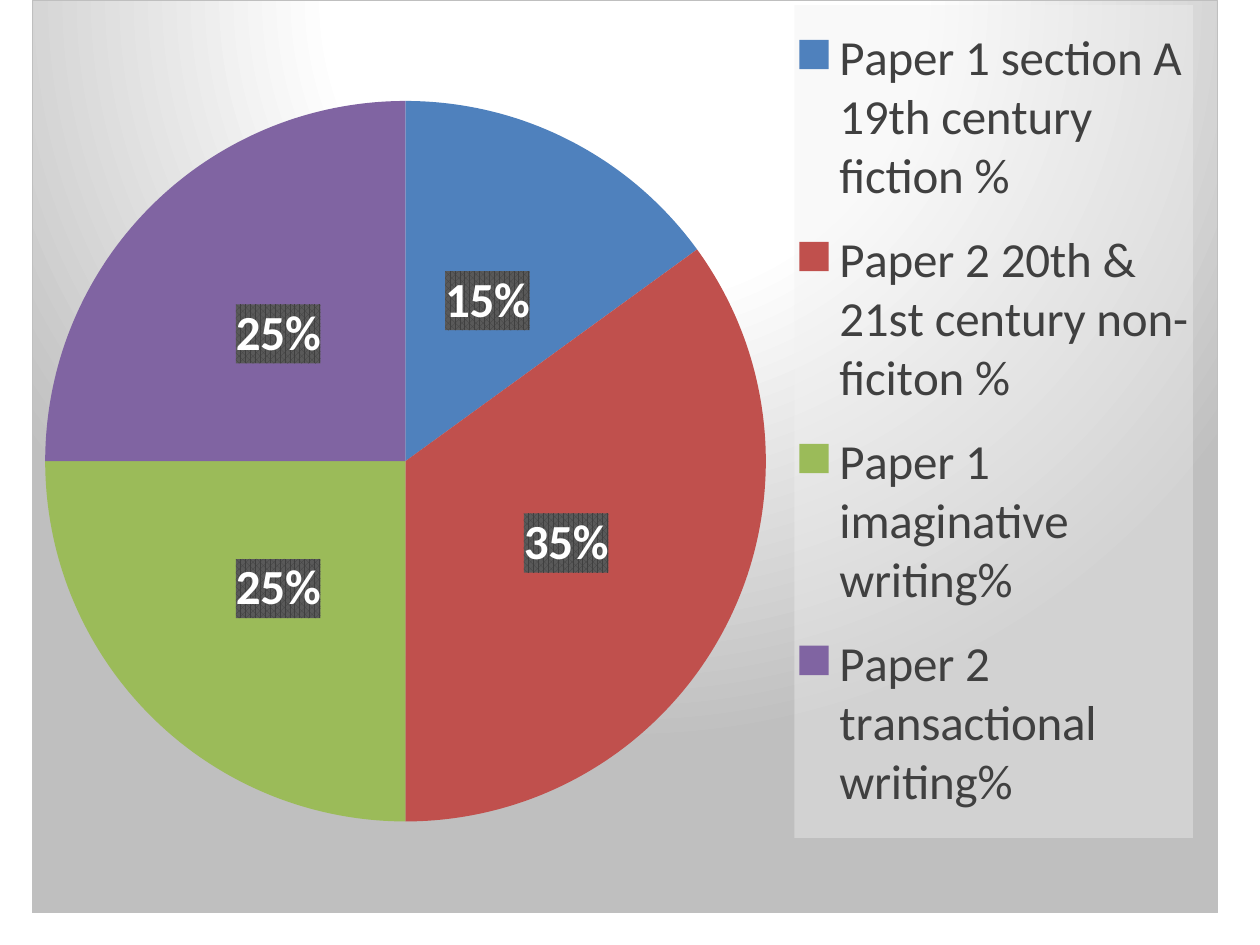
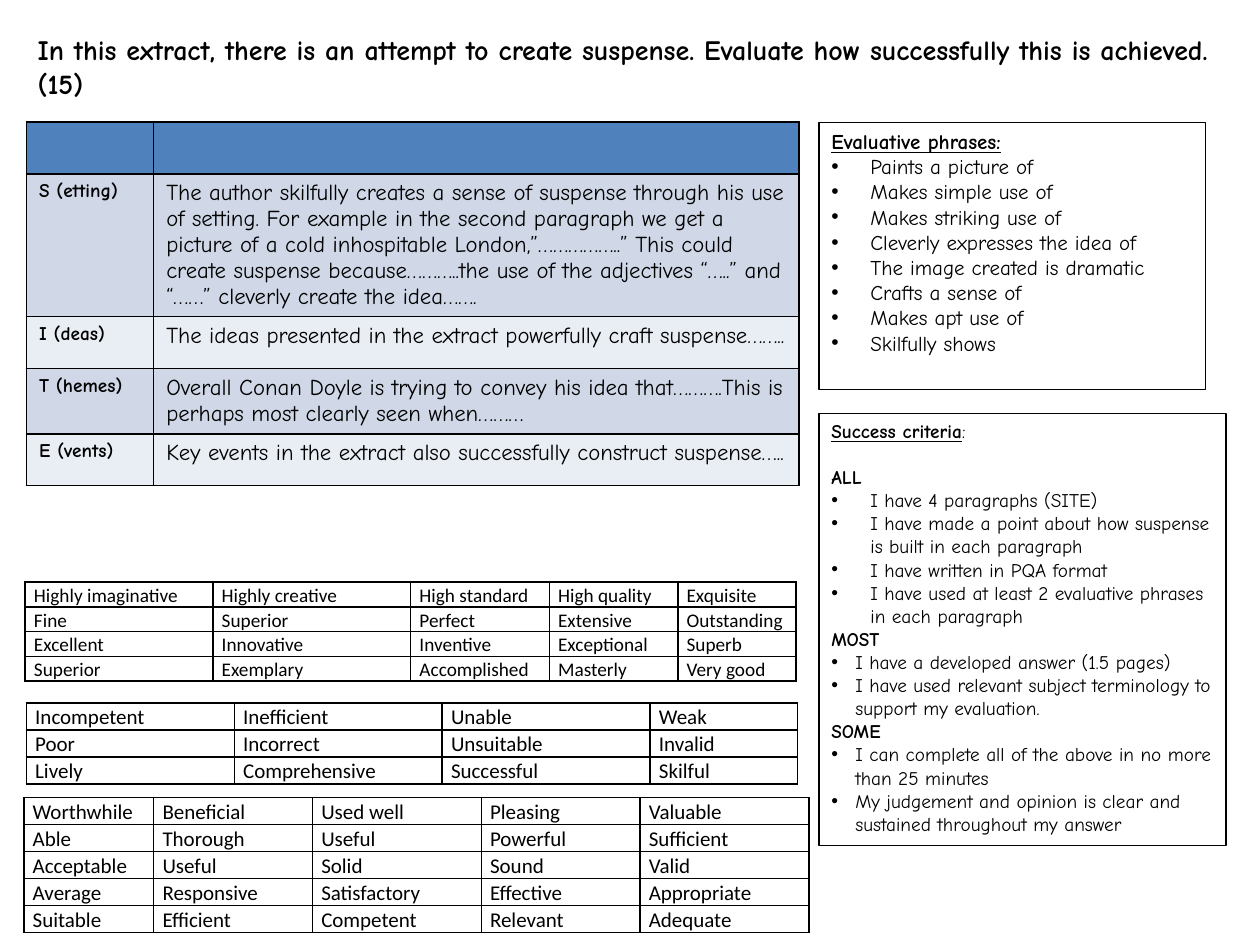
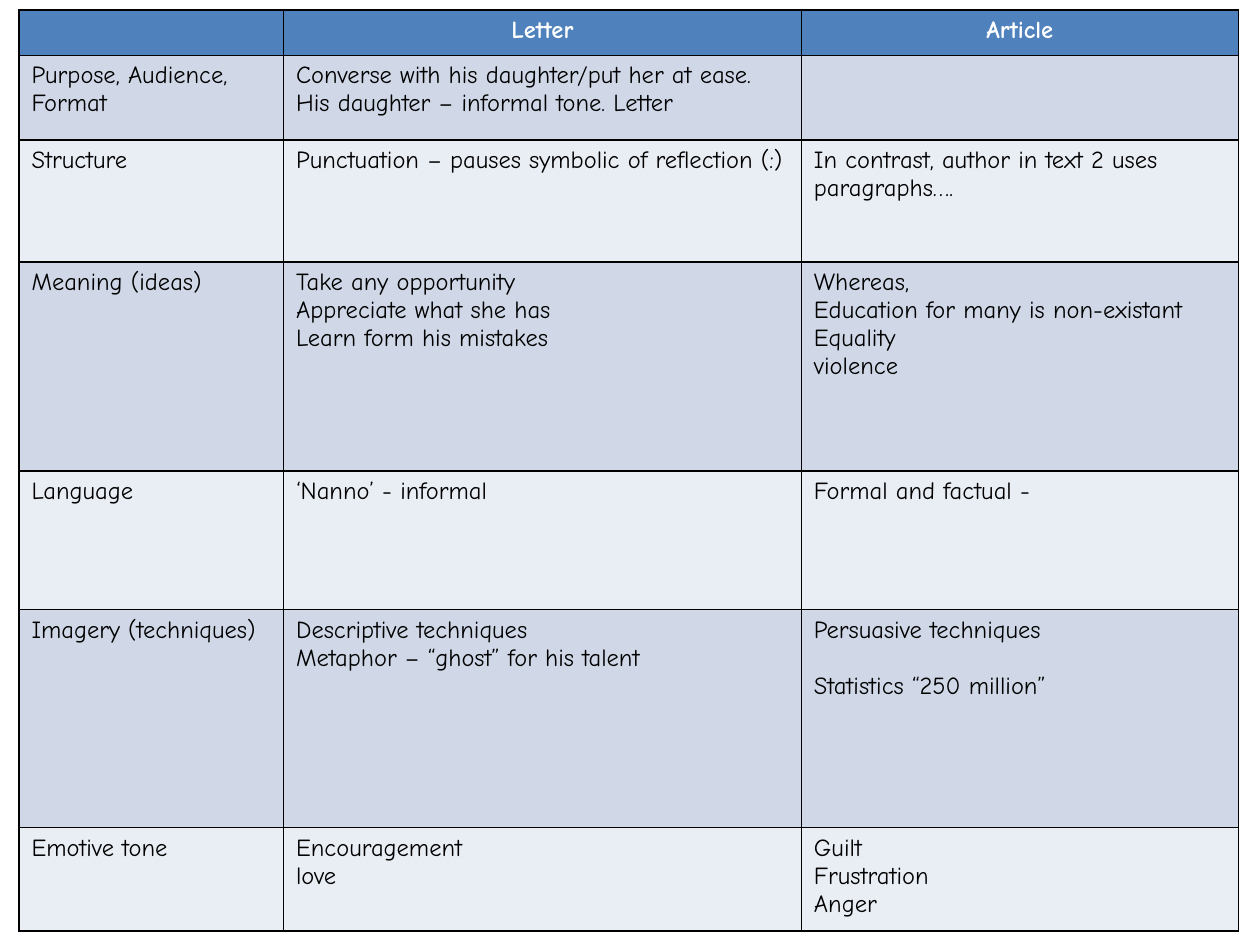
from lxml import etree
from pptx import Presentation
from pptx import util as u
from pptx.chart.data import CategoryChartData
from pptx.dml.color import RGBColor
from pptx.enum import chart as charts, shapes, text
from pptx.oxml import ns, parse_xml

HAND, PLAIN = "Comic Neue", "Calibri"
BLACK, WHITE = "000000", "FFFFFF"
HEADER, BANDS = "4F81BD", ("D0D8E8", "E9EDF4")
SLICES = ("4F81BD", "C0504D", "9BBB59", "8064A2")
DRAWING, CHART = ns.nsdecls("a"), ns.nsdecls("c", "a")

PAPERS = {
    "Paper 1 section A 19th century fiction %": 15,
    "Paper 2 20th & 21st century non-ficiton %": 35,
    "Paper 1 imaginative writing%": 25,
    "Paper 2 transactional writing%": 25,
}
QUESTION = ("In this extract, there is an attempt to create suspense. "
            "Evaluate how successfully this is achieved.(15)")
SITE = [
    ("", ""),
    ("S (etting)",
     "The author skilfully creates a sense of suspense through his use of setting. "
     "For example in the second paragraph we get a picture of a cold inhospitable "
     "London,”……………..” This could create suspense because………..the use of the "
     "adjectives “…..” and “……” cleverly create the idea……."),
    ("I (deas)", "The ideas presented in the extract powerfully craft suspense…….."),
    ("T (hemes)", "Overall Conan Doyle is trying to convey his idea that……….This is "
                  "perhaps most clearly seen when………"),
    ("E (vents)", "Key events in the extract also successfully construct suspense….."),
]
PRAISE = [
    ("Highly imaginative", "Highly creative", "High standard", "High quality", "Exquisite"),
    ("Fine", "Superior", "Perfect", "Extensive", "Outstanding"),
    ("Excellent", "Innovative", "Inventive", "Exceptional", "Superb"),
    ("Superior", "Exemplary", "Accomplished", "Masterly", "Very good"),
]
CRITICISM = [
    ("Incompetent", "Inefficient", "Unable", "Weak"),
    ("Poor", "Incorrect", "Unsuitable", "Invalid"),
    ("Lively", "Comprehensive", "Successful", "Skilful"),
]
APPROVAL = [
    ("Worthwhile", "Beneficial", "Used well", "Pleasing", "Valuable"),
    ("Able", "Thorough", "Useful", "Powerful", "Sufficient"),
    ("Acceptable", "Useful", "Solid", "Sound", "Valid"),
    ("Average", "Responsive", "Satisfactory", "Effective", "Appropriate"),
    ("Suitable", "Efficient", "Competent", "Relevant", "Adequate"),
]
# Each section: heading, bullet indent in inches, bullets
PHRASES = [
    ("Evaluative phrases:", 0.31, (
        "Paints a picture of", "Makes simple use of", "Makes striking use of",
        "Cleverly expresses the idea of", "The image created is dramatic",
        "Crafts a sense of", "Makes apt use of", "Skilfully shows")),
]
CRITERIA = [
    ("Success criteria:", 0, ()),
    ("ALL", 0.31, (
        "I have 4 paragraphs (SITE)",
        "I have made a point about how suspense is built in each paragraph",
        "I have written in PQA format",
        "I have used at least 2 evaluative phrases in each paragraph")),
    ("MOST", 0.19, (
        "I have a developed answer (1.5 pages)",
        "I have used relevant subject terminology to support my evaluation.")),
    ("SOME", 0.19, (
        "I can complete all of the above in no more than 25 minutes",
        "My judgement and opinion is clear and sustained throughout my answer")),
]
COMPARISON = [
    ("", "Letter", "Article"),
    ("Purpose, Audience, Format",
     "Converse with his daughter/put her at ease. His daughter – informal tone. Letter", ""),
    ("Structure", "Punctuation – pauses symbolic of reflection (:)",
     "In contrast, author in text 2 uses paragraphs…."),
    ("Meaning (ideas)",
     "Take any opportunity\nAppreciate what she has\nLearn form his mistakes",
     "Whereas,\nEducation for many is non-existant\nEquality\nviolence"),
    ("Language", "‘Nanno’ - informal", "Formal and factual -"),
    ("Imagery (techniques)",
     "Descriptive techniques\nMetaphor – “ghost” for his talent",
     "Persuasive techniques\nStatistics “250 million”"),
    ("Emotive tone", "Encouragement\nlove", "Guilt\nFrustration\nAnger"),
]


def rgb(color):
    return RGBColor.from_string(color)


def style(font, size, name=HAND, color=BLACK, bold=False, underline=False):
    font.size, font.name = u.Pt(size), name
    font.bold, font.underline = bold, underline
    font.color.rgb = rgb(color)


def inches(*lengths):
    return [u.Inches(length) for length in lengths]


def add_grid(page, box, widths, heights, rows):
    """Add a table with thin black borders and no fill."""
    frame = page.shapes.add_table(len(rows), len(widths), *inches(*box))
    table = frame.table
    table.first_row = table.horz_banding = False
    for column, width in zip(table.columns, widths):
        column.width = u.Inches(width)
    for row, height, words in zip(table.rows, heights, rows):
        row.height = u.Inches(height)
        for cell, word in zip(row.cells, words):
            cell.text_frame.text = word
            cell.fill.background()
            for position, side in enumerate(("lnL", "lnR", "lnT", "lnB")):
                cell._tc.tcPr.insert(position, parse_xml(
                    f'<a:{side} {DRAWING} w="12700"><a:solidFill>'
                    f'<a:srgbClr val="{BLACK}"/></a:solidFill></a:{side}>'))
    return table


def style_cell(cell, size, **look):
    for para in cell.text_frame.paragraphs:
        for span in para.runs:
            style(span.font, size, **look)
        if not para.runs:
            para._p.get_or_add_endParaRPr().set("sz", str(size * 100))


def shade_rows(table):
    for index, row in enumerate(table.rows):
        for cell in row.cells:
            cell.fill.solid()
            cell.fill.fore_color.rgb = rgb(BANDS[(index - 1) % 2] if index else HEADER)


def add_site_table(page, box):
    table = add_grid(page, box, (1.01, 5.12), (0.41, 1.13, 0.41, 0.52, 0.41), SITE)
    shade_rows(table)
    for row in table.rows:
        style_cell(row.cells[0], 11, bold=True)
        style_cell(row.cells[1], 13)


def add_word_bank(page, box, widths, rows, size):
    table = add_grid(page, box, widths, [box[3] / len(rows)] * len(rows), rows)
    for cell in table.iter_cells():
        cell.margin_left = cell.margin_right = u.Inches(0.07)
        cell.margin_top = cell.margin_bottom = 0
        cell.text_frame.paragraphs[0].line_spacing = 1.07
        style_cell(cell, size, name=PLAIN)


def add_comparison_table(page, box):
    table = add_grid(page, box, (2.1, 4.11, 3.47),
                     (0.36, 0.67, 0.97, 1.66, 1.1, 1.73, 0.82), COMPARISON)
    shade_rows(table)
    for index, row in enumerate(table.rows):
        for cell in row.cells:
            style_cell(cell, 14, color=BLACK if index else WHITE, bold=not index)
            if not index:
                cell.text_frame.paragraphs[0].alignment = text.PP_ALIGN.CENTER
    statistics = table.cell(5, 2).text_frame.paragraphs[1]
    statistics.space_before = u.Pt(16)


def add_bullet(para, indent):
    properties = para._p.get_or_add_pPr()
    properties.set("marL", str(u.Inches(indent)))
    properties.set("indent", str(-u.Inches(indent)))
    properties.append(parse_xml(f'<a:buFont {DRAWING} typeface="Arial"/>'))
    properties.append(parse_xml(f'<a:buChar {DRAWING} char="•"/>'))


def add_checklist(page, box, sections, size):
    """Add an outlined box of headings, each followed by its bullets."""
    panel = page.shapes.add_shape(shapes.MSO_SHAPE.RECTANGLE, *inches(*box))
    panel.shadow.inherit = False
    panel.fill.background()
    panel.line.color.rgb = rgb(BLACK)
    panel.line.width = u.Pt(0.75)
    frame = panel.text_frame
    frame.word_wrap = True
    frame.vertical_anchor = text.MSO_ANCHOR.TOP
    for index, (heading, indent, bullets) in enumerate(sections):
        para = frame.add_paragraph() if index else frame.paragraphs[0]
        para.text = heading
        para.alignment = text.PP_ALIGN.LEFT
        style(para.runs[0].font, size, bold=True, underline=not index)
        for bullet in bullets:
            para = frame.add_paragraph()
            para.text = bullet
            para.alignment = text.PP_ALIGN.LEFT
            add_bullet(para, indent)
            style(para.runs[0].font, size)
    return frame


def add_criteria(page, box):
    frame = add_checklist(page, box, CRITERIA, 11)
    title, first_level = frame.paragraphs[:2]
    title.runs[0].text = title.text.rstrip(":")
    colon = title.add_run()
    colon.text = ":"
    style(colon.font, 11)
    first_level.space_before = u.Pt(13)


def add_question(page, box):
    frame = page.shapes.add_textbox(*inches(*box)).text_frame
    frame.word_wrap = True
    frame.text = QUESTION
    style(frame.paragraphs[0].runs[0].font, 16, bold=True)


def manual_layout(x, y, width, height, inner=False):
    target = '<c:layoutTarget val="inner"/>' if inner else ""
    return parse_xml(
        f'<c:layout {CHART}><c:manualLayout>{target}'
        '<c:xMode val="edge"/><c:yMode val="edge"/>'
        f'<c:x val="{x}"/><c:y val="{y}"/><c:w val="{width}"/><c:h val="{height}"/>'
        '</c:manualLayout></c:layout>')


def replace_layout(parent, position, layout):
    for old in parent.findall(ns.qn("c:layout")):
        parent.remove(old)
    parent.insert(position, layout)


def set_background(parent, paint):
    """Give a chart part its fill and line, just ahead of its text properties."""
    for old in parent.findall(ns.qn("c:spPr")):
        parent.remove(old)
    parent.find(ns.qn("c:txPr")).addprevious(
        parse_xml(f"<c:spPr {CHART}>{paint}</c:spPr>"))


def solid(color, extra=""):
    return f'<a:solidFill><a:srgbClr val="{color}">{extra}</a:srgbClr></a:solidFill>'


def add_papers_chart(page, box):
    data = CategoryChartData()
    data.categories = list(PAPERS)
    data.add_series("Series 1", list(PAPERS.values()))
    chart = page.shapes.add_chart(charts.XL_CHART_TYPE.PIE, *inches(*box), data).chart
    chart.has_title = False
    style(chart.font, 28, PLAIN)
    stops = "".join(f'<a:gs pos="{place}"><a:srgbClr val="{color}"/></a:gs>' for place, color
                    in ((0, WHITE), (39000, WHITE), (100000, "BFBFBF")))
    set_background(chart._chartSpace, (
        f'<a:gradFill><a:gsLst>{stops}</a:gsLst><a:path path="circle">'
        '<a:fillToRect l="50000" t="-80000" r="50000" b="180000"/></a:path></a:gradFill>'
        f'<a:ln w="9525">{solid("BFBFBF")}</a:ln>'))

    plot = chart.plots[0]
    plot.vary_by_categories = True
    replace_layout(chart._chartSpace.chart.plotArea, 0,
                   manual_layout(0.01, 0.11, 0.61, 0.79, inner=True))
    for index, color in enumerate(SLICES):
        piece = plot.series[0].points[index].format
        piece.fill.solid()
        piece.fill.fore_color.rgb = rgb(color)
        piece.line.fill.background()

    plot.has_data_labels = True
    labels = plot.data_labels
    labels.show_percentage, labels.show_value = True, False
    labels.number_format, labels.number_format_is_linked = "0%", False
    labels.position = charts.XL_LABEL_POSITION.CENTER
    style(labels.font, 28, PLAIN, WHITE, bold=True)
    set_background(labels._element, (
        '<a:pattFill prst="pct75"><a:fgClr><a:srgbClr val="404040"/></a:fgClr>'
        '<a:bgClr><a:srgbClr val="595959"/></a:bgClr></a:pattFill><a:ln><a:noFill/></a:ln>'))

    chart.has_legend = True
    legend = chart.legend
    legend.position = charts.XL_LEGEND_POSITION.RIGHT
    legend.include_in_layout = False
    style(legend.font, 28, PLAIN, "404040")
    replace_layout(legend._element, 1, manual_layout(0.643, 0.005, 0.336, 0.913))
    set_background(legend._element, solid("F2F2F2", '<a:alpha val="39000"/>'))


def build_evaluation(page):
    add_site_table(page, (0.21, 0.97, 6.13, 2.88))
    add_checklist(page, (6.5, 0.97, 3.07, 2.12), PHRASES, 12)
    add_question(page, (0.2, 0.21, 9.66, 0.64))
    add_word_bank(page, (0.2, 4.62, 6.14, 0.78), (1.49, 1.57, 1.1, 1.02, 0.94), PRAISE, 11)
    add_word_bank(page, (0.21, 5.58, 6.13, 0.64), (1.65, 1.65, 1.65, 1.17), CRITICISM, 12)
    add_word_bank(page, (0.19, 6.33, 6.23, 1.07), (1.03, 1.26, 1.34, 1.26, 1.34), APPROVAL, 12)
    add_criteria(page, (6.5, 3.28, 3.23, 3.43))


def main():
    deck = Presentation()
    deck.slide_width, deck.slide_height = inches(10, 7.5)
    blank = deck.slide_layouts[6]
    add_papers_chart(deck.slides.add_slide(blank), (0.25, 0, 9.42, 7.25))
    build_evaluation(deck.slides.add_slide(blank))
    add_comparison_table(deck.slides.add_slide(blank), (0.15, 0.08, 9.68, 7.32))
    deck.save("out.pptx")


if __name__ == "__main__":
    main()
